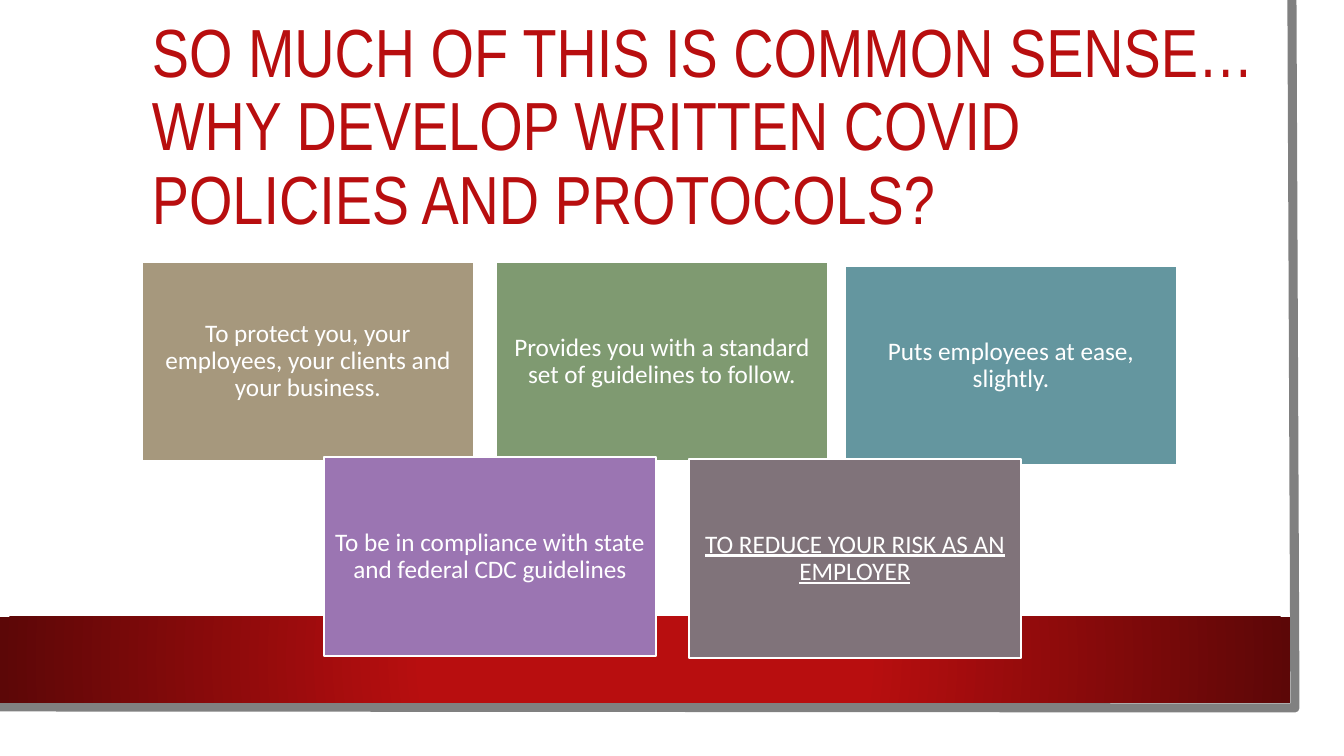
from lxml.etree import SubElement
from pptx import Presentation
from pptx.dml.color import RGBColor
from pptx.enum.shapes import MSO_SHAPE
from pptx.enum.text import MSO_ANCHOR, PP_ALIGN
from pptx.oxml.ns import qn
from pptx.util import Pt

PX = 9071.43
RED = RGBColor(0xB8, 0x0E, 0x0F)
DARK_RED = RGBColor(0x5C, 0x07, 0x07)
GRAY = RGBColor(0x80, 0x80, 0x80)
WHITE = RGBColor(0xFF, 0xFF, 0xFF)
TAN = RGBColor(0xA6, 0x98, 0x7D)
GREEN = RGBColor(0x7F, 0x9A, 0x71)
TEAL = RGBColor(0x64, 0x96, 0x9F)
PURPLE = RGBColor(0x9B, 0x75, 0xB2)
MAUVE = RGBColor(0x80, 0x73, 0x7A)


def emu(*lengths):
    return [round(length * PX) for length in lengths]


def write_text(shape, text, alignment, font_values):
    frame = shape.text_frame
    frame.word_wrap = True
    frame.vertical_anchor = MSO_ANCHOR.MIDDLE
    paragraph = frame.paragraphs[0]
    paragraph.text = text
    paragraph.alignment = alignment
    paragraph.line_spacing = 0.9
    font = paragraph.runs[0].font
    for name, value in font_values.items():
        if name == "color":
            font.color.rgb = value
        else:
            setattr(font, name, value)


presentation = Presentation()
presentation.slide_width, presentation.slide_height = emu(1344, 756)
slide = presentation.slides.add_slide(presentation.slide_layouts[6])
shapes = slide.shapes

builder = shapes.build_freeform(1292, 0, scale=PX)
builder.add_line_segments([(1295, 708), (-3, 707)], close=False)
page_edge = builder.convert_to_shape()
page_edge.shadow.inherit = False
page_edge.fill.background()
page_edge.line.color.rgb = GRAY
page_edge.line.width = Pt(6.5)

band = shapes.add_shape(MSO_SHAPE.RECTANGLE, *emu(0, 617, 1290, 86))
band.shadow.inherit = False
band.line.fill.background()
band.fill.gradient()
for stop, position, color in zip(band.fill.gradient_stops, (0.34, 1), (RED, DARK_RED)):
    stop.position = position
    stop.color.rgb = color
gradient = band.element.spPr.find(qn("a:gradFill"))
gradient.remove(gradient.find(qn("a:lin")))
circle = SubElement(gradient, qn("a:path"), {"path": "circle"})
center = {side: "50000" for side in ("l", "t", "r", "b")}
SubElement(circle, qn("a:fillToRect"), center)

title = shapes.add_textbox(*emu(142, 68, 1124, 121))
write_text(
    title,
    "SO MUCH OF THIS IS COMMON SENSE…WHY DEVELOP WRITTEN COVID POLICIES AND PROTOCOLS?",
    PP_ALIGN.LEFT,
    {"name": "Arial Narrow", "size": Pt(48.6), "color": RED},
)

reasons = [
    (142, 262, TAN, False, "To protect you, your employees, your clients and your business."),
    (496, 262, GREEN, False, "Provides you with a standard set of guidelines to follow."),
    (845, 266, TEAL, False, "Puts employees at ease, slightly."),
    (324, 457, PURPLE, False, "To be in compliance with state and federal CDC guidelines"),
    (689, 459, MAUVE, True, "TO REDUCE YOUR RISK AS AN EMPLOYER"),
]
for left, top, color, underline, text in reasons:
    card = shapes.add_shape(MSO_SHAPE.RECTANGLE, *emu(left, top, 332, 199))
    card.shadow.inherit = False
    card.fill.solid()
    card.fill.fore_color.rgb = color
    card.line.color.rgb = WHITE
    card.line.width = Pt(1.5)
    for side in ("left", "top", "right", "bottom"):
        setattr(card.text_frame, f"margin_{side}", emu(7)[0])
    font_values = {"name": "Calibri", "size": Pt(18), "color": WHITE, "underline": underline}
    write_text(card, text, PP_ALIGN.CENTER, font_values)

presentation.save("out.pptx")
